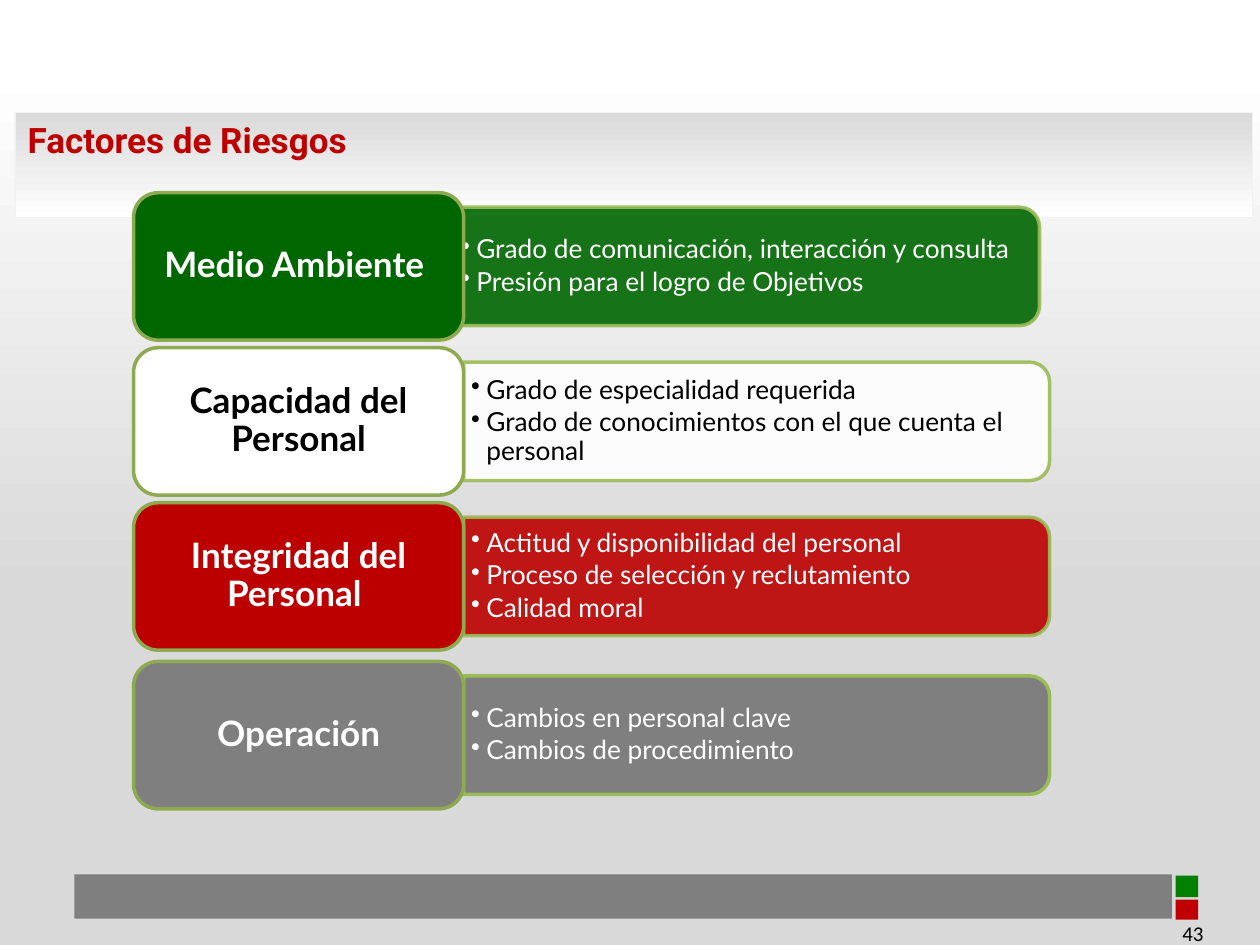
from lxml.etree import SubElement
from pptx import Presentation
from pptx.dml.color import RGBColor
from pptx.enum.shapes import MSO_SHAPE as Shape
from pptx.enum.text import MSO_ANCHOR as Anchor, MSO_AUTO_SIZE as AutoSize, PP_ALIGN as Align
from pptx.oxml.ns import qn
from pptx.util import Inches, Pt

# Content: name, list items, fill, text colour, panel opacity, card top, panel left
TITLE = "Factores de Riesgos"
PAGE = "43"
FACTORS = [
    ("Medio Ambiente ",
     ["Grado de comunicación, interacción y consulta", "Presión para el logro de Objetivos"],
     "green", "white", 90, 1.53, 3.60),
    ("Capacidad del Personal",
     ["Grado de especialidad requerida", "Grado de conocimientos con el que cuenta el personal"],
     "white", "black", 90, 2.76, 3.68),
    ("Integridad del Personal ",
     ["Actitud y disponibilidad del personal", "Proceso de selección y reclutamiento",
      "Calidad moral"],
     "red", "white", 90, 3.99, 3.68),
    ("Operación",
     ["Cambios en personal clave", "Cambios de procedimiento"],
     "gray", "white", 100, 5.25, 3.68),
]
COLORS = {
    "green": "006600", "white": "FFFFFF", "red": "BC0000", "gray": "7F7F7F",
    "black": "000000", "silver": "D9D9D9", "frame": "F2F2F2",
    "card line": "8DAA51", "panel line": "9BBB59",
    "footer green": "008000", "footer red": "C00000",
}
FOOTER = [
    ("footer red", 9.33, 7.14, 0.18, 0.16),
    ("footer green", 9.33, 6.95, 0.18, 0.17),
    ("gray", 0.59, 6.94, 8.71, 0.35),
]

# Sizes in inches
CARD_LEFT, CARD_WIDTH, CARD_HEIGHT = 1.06, 2.62, 1.17
PANEL_WIDTH, PANEL_HEIGHT = 4.65, 0.94
LIST_WIDTH, LIST_HEIGHT = 4.61, 0.85
INDENT = 0.12


def color(name):
    return RGBColor.from_string(COLORS[name])


def fill_gradient(fill, *stops):
    """Fill from bottom to top with two (position, colour) stops."""
    fill.gradient()
    fill.gradient_angle = 90
    for stop, (position, name) in zip(fill.gradient_stops, stops):
        stop.position = position
        stop.color.rgb = color(name)


def set_opacity(solid_fill, percent):
    SubElement(solid_fill[0], qn("a:alpha"), val=str(percent * 1000))


def add_block(slide, kind, box, fill, line=None):
    shape = slide.shapes.add_shape(kind, *map(Inches, box))
    shape.shadow.inherit = False
    shape.fill.solid()
    shape.fill.fore_color.rgb = color(fill)
    if line:
        shape.line.color.rgb = color(line)
        shape.line.width = Pt(2)
    else:
        shape.line.fill.background()
    return shape


def set_frame(frame, horizontal, vertical):
    frame.word_wrap = True
    frame.vertical_anchor = Anchor.MIDDLE
    frame.margin_left = frame.margin_right = Inches(horizontal)
    frame.margin_top = frame.margin_bottom = Inches(vertical)


def add_run(paragraph, text, font, size, name, bold=False):
    run = paragraph.add_run()
    run.text = text
    run.font.name = font
    run.font.size = Pt(size)
    run.font.bold = bold
    run.font.color.rgb = color(name)


def add_panel(slide, left, middle, fill, opacity):
    # A quarter turn brings the two rounded corners to the right
    box = (left + (PANEL_WIDTH - PANEL_HEIGHT) / 2, middle - PANEL_WIDTH / 2,
           PANEL_HEIGHT, PANEL_WIDTH)
    panel = add_block(slide, Shape.ROUND_2_SAME_RECTANGLE, box, fill, "panel line")
    panel.rotation = 90
    if opacity < 100:
        for solid_fill in panel.element.spPr.iter(qn("a:solidFill")):
            set_opacity(solid_fill, opacity)


def add_list(slide, left, middle, items, text_color):
    box = (left, middle - LIST_HEIGHT / 2, LIST_WIDTH, LIST_HEIGHT)
    frame = slide.shapes.add_textbox(*map(Inches, box)).text_frame
    set_frame(frame, 0.06, 0.03)
    for index, item in enumerate(items):
        paragraph = frame.add_paragraph() if index else frame.paragraphs[0]
        paragraph.level = 1
        paragraph.line_spacing = 0.9
        paragraph.space_after = Pt(2.25)
        properties = paragraph._p.get_or_add_pPr()
        properties.set("marL", str(Inches(INDENT)))
        properties.set("indent", str(-Inches(INDENT)))
        SubElement(properties, qn("a:buChar"), char="•")
        add_run(paragraph, item, "Lato", 15, text_color)


def add_card(slide, top, name, fill, text_color):
    box = (CARD_LEFT, top, CARD_WIDTH, CARD_HEIGHT)
    card = add_block(slide, Shape.ROUNDED_RECTANGLE, box, fill, "card line")
    set_frame(card.text_frame, 0.14, 0.1)
    paragraph = card.text_frame.paragraphs[0]
    paragraph.alignment = Align.CENTER
    paragraph.line_spacing = 0.9
    add_run(paragraph, name, "Lato", 20, text_color, bold=True)


def main():
    presentation = Presentation()
    presentation.slide_width, presentation.slide_height = Inches(10), Inches(7.5)
    slide = presentation.slides.add_slide(presentation.slide_layouts[5])
    fill_gradient(slide.background.fill, (0.37, "silver"), (0.93, "white"))

    # Title band
    title = slide.shapes.title
    title.left, title.top, title.width, title.height = map(Inches, (0.12, 0.89, 9.82, 0.44))
    fill_gradient(title.fill, (0, "white"), (1, "silver"))
    title.line.color.rgb = color("frame")
    title.line.width = Pt(0.75)
    title.text_frame.vertical_anchor = Anchor.TOP
    title.text_frame.auto_size = AutoSize.SHAPE_TO_FIT_TEXT
    paragraph = title.text_frame.paragraphs[0]
    paragraph.alignment = Align.LEFT
    add_run(paragraph, TITLE, "Roboto", 20, "red", bold=True)

    # Footer bar, squares and page number
    for fill, *box in FOOTER:
        add_block(slide, Shape.RECTANGLE, box, fill)
    number = slide.shapes.add_textbox(*map(Inches, (7.4, 7.21, 2.25, 0.4))).text_frame
    set_frame(number, 0.1, 0.05)
    number.paragraphs[0].alignment = Align.RIGHT
    add_run(number.paragraphs[0], PAGE, "Calibri", 12, "black")

    # One row per factor: panel, list, card on top
    for name, items, fill, text_color, opacity, top, left in FACTORS:
        middle = top + CARD_HEIGHT / 2
        add_panel(slide, left, middle, fill, opacity)
        add_list(slide, left, middle, items, text_color)
        add_card(slide, top, name, fill, text_color)

    presentation.save("out.pptx")


if __name__ == "__main__":
    main()
